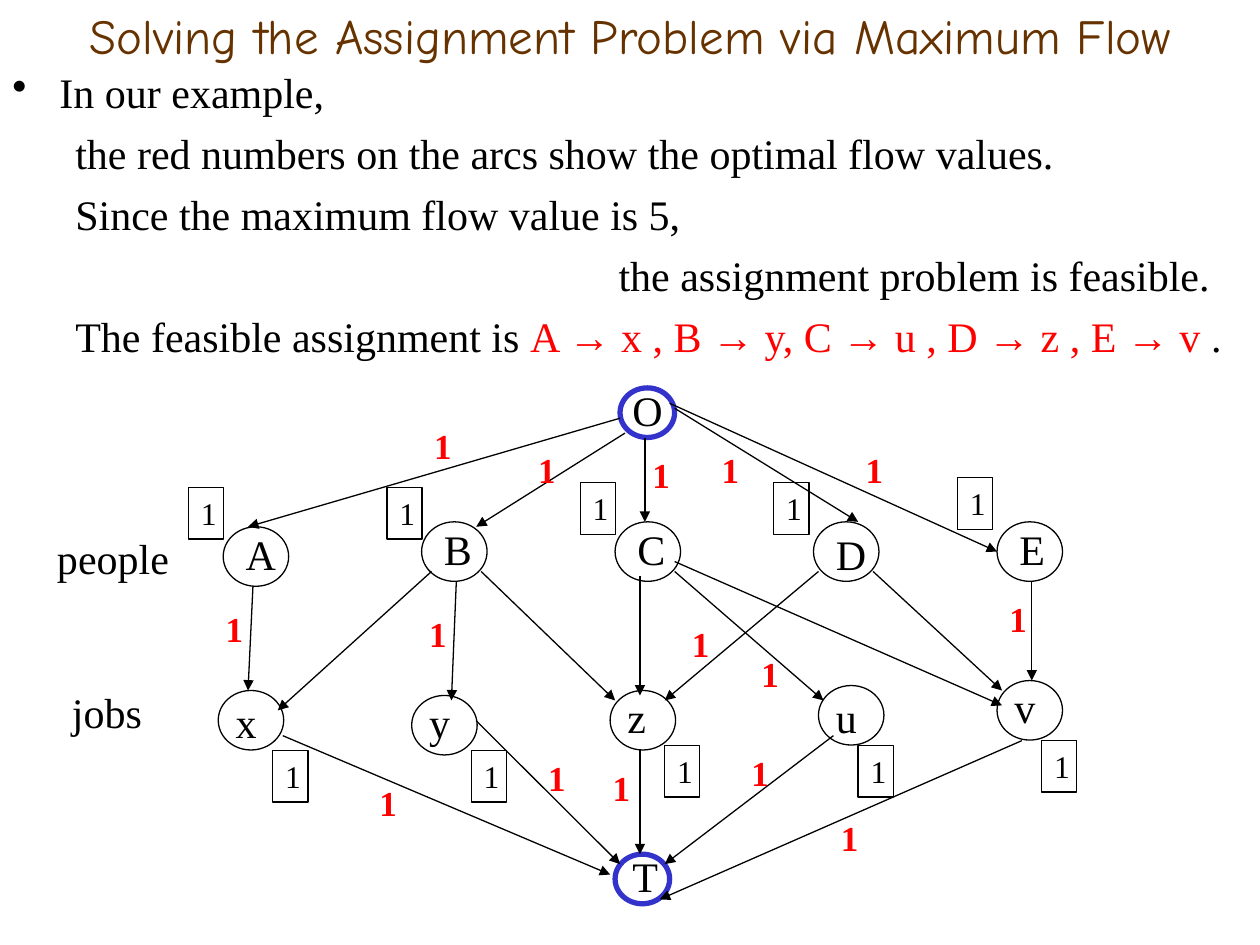
from lxml.etree import SubElement
from pptx import Presentation
from pptx.dml.color import RGBColor
from pptx.enum.shapes import MSO_CONNECTOR, MSO_SHAPE
from pptx.enum.text import MSO_ANCHOR, MSO_AUTO_SIZE, PP_ALIGN
from pptx.oxml.ns import qn
from pptx.util import Cm, Pt

BODY_FONT = "Times New Roman"
BLACK, WHITE, RED, BLUE, BROWN = "000000", "FFFFFF", "FF0000", "3333CC", "663300"

# Each node: circle left and top, then letter left and top.
PEOPLE = {
    "A": (4.5, 10.62, 4.7, 10.52),
    "B": (8.5, 10.52, 8.7, 10.42),
    "C": (12.4, 10.52, 12.6, 10.42),
    "D": (16.4, 10.52, 16.6, 10.52),
    "E": (20.1, 10.52, 20.3, 10.42),
}
JOBS = {
    "x": (4.4, 13.92, 4.5, 13.92),
    "y": (8.3, 14.02, 8.4, 13.92),
    "z": (12.3, 13.92, 12.4, 13.82),
    "u": (16.5, 13.82, 16.6, 13.82),
    "v": (20.1, 13.72, 20.2, 13.62),
}
TERMINALS = {"O": (12.5, 7.82, 12.5, 7.62), "T": (12.4, 17.22, 12.5, 17.02)}
ROW_LABELS = {"people": (0.9, 10.62, 3.4), "jobs": (1.2, 13.72, 2.2)}

PERSON_CAPACITIES = [
    (3.8, 9.83), (7.8, 9.83), (11.7, 9.73), (15.6, 9.73), (19.3, 9.63),
]
JOB_CAPACITY_SHIFT = (1.7, 5.3)

ARCS = [
    (5.1, 11.82, 5, 13.92),
    (8.7, 11.52, 5.6, 14.32),
    (9.2, 11.72, 9.1, 14.12),
    (9.7, 11.52, 12.4, 14.12),
    (12.9, 11.62, 12.9, 14.02),
    (13.6, 11.52, 16.6, 14.12),
    (16.5, 11.52, 13.4, 14.12),
    (20.8, 11.72, 20.8, 13.72),
    (17.6, 11.52, 20.2, 13.92),
    (13.6, 11.32, 20.2, 14.22),
    (12.5, 8.43, 5, 10.62),
    (12.6, 8.73, 9.6, 10.62),
    (13, 8.82, 13, 10.52),
    (13.6, 8.23, 17.3, 10.52),
    (13.5, 8.13, 20.1, 11.12),
    (5.7, 14.83, 12.3, 17.63),
    (9.6, 14.53, 12.5, 17.42),
    (12.9, 15.12, 12.9, 17.22),
    (16.8, 14.83, 13.4, 17.42),
    (20.6, 14.93, 13.3, 18.13),
]
FLOWS = [
    (7.4, 15.62), (10.8, 15.12), (12.1, 15.32), (14.9, 15.02), (16.7, 16.34),
    (4.3, 12.12), (8.4, 12.22), (15.1, 13.03), (13.7, 12.42), (20.1, 11.92),
    (17.2, 8.92), (14.3, 8.92), (12.9, 9.02), (10.6, 8.92), (8.5, 8.43),
]

# Each line: left margin, first-line indent, bullet, coloured pieces.
EXPLANATION = [
    (0.95, -0.95, "•", [("In our example,", BLACK)]),
    (2.06, -0.79, None,
     [("the red numbers on the arcs show the optimal flow values.", BLACK)]),
    (2.06, -0.79, None, [("Since the maximum flow value is 5,", BLACK)]),
    (12.22, 0, None, [("the assignment problem is feasible.", BLACK)]),
    (2.06, -0.79, None,
     [("The feasible assignment is ", BLACK),
      ("A → x , B → y, C → u , D → z , E → v", RED), (" .", BLACK)]),
]


def rgb(value):
    """Return the colour for a hex string."""
    return RGBColor.from_string(value)


def format_run(run, size, color=BLACK, bold=False, face=BODY_FONT):
    """Set the font of one run."""
    run.font.name = face
    run.font.size = Pt(size)
    run.font.bold = bold
    run.font.color.rgb = rgb(color)


def write(frame, text, size, color=BLACK, bold=False):
    """Put a short left-aligned label at the top of a text frame."""
    frame.word_wrap = True
    frame.vertical_anchor = MSO_ANCHOR.TOP
    paragraph = frame.paragraphs[0]
    paragraph.text = text
    paragraph.alignment = PP_ALIGN.LEFT
    format_run(paragraph.runs[0], size, color, bold)


def add_label(slide, text, left, top, width=1, height=1.27, size=24,
              color=BLACK, bold=False):
    """Add a free-standing label."""
    label = slide.shapes.add_textbox(Cm(left), Cm(top), Cm(width), Cm(height))
    write(label.text_frame, text, size, color, bold)


def add_outline(slide, kind, left, top, width, height, line=BLACK, weight=0.75):
    """Add an unfilled outlined shape and return it."""
    outline = slide.shapes.add_shape(
        kind, Cm(left), Cm(top), Cm(width), Cm(height))
    outline.shadow.inherit = False
    outline.fill.background()
    outline.line.color.rgb = rgb(line)
    outline.line.width = Pt(weight)
    return outline


def add_nodes(slide, nodes, width, height, line=BLACK, weight=0.75):
    """Add white circles, each with its letter."""
    for letter, (left, top, letter_left, letter_top) in nodes.items():
        circle = add_outline(slide, MSO_SHAPE.OVAL, left, top, width, height,
                             line, weight)
        circle.fill.solid()
        circle.fill.fore_color.rgb = rgb(WHITE)
        add_label(slide, letter, letter_left, letter_top)


def add_capacity(slide, left, top):
    """Add a boxed unit capacity."""
    capacity = add_outline(slide, MSO_SHAPE.RECTANGLE, left, top, 0.71, 1.04)
    write(capacity.text_frame, "1", 18)


def add_arc(slide, *ends):
    """Add an arrow from its start to its end point."""
    arc = slide.shapes.add_connector(MSO_CONNECTOR.STRAIGHT, *map(Cm, ends))
    arc.line.color.rgb = rgb(BLACK)
    arc.line.width = Pt(0.75)
    SubElement(arc.line._get_or_add_ln(), qn("a:tailEnd"), type="triangle")
    SubElement(arc._element.spPr, qn("a:effectLst"))


def set_title(slide, text):
    """Move, fill and format the title placeholder."""
    title = slide.shapes.title
    title.left, title.top, title.width, title.height = map(Cm, (0, 0, 25.4, 1.42))
    frame = title.text_frame
    frame.text = text
    frame.auto_size = MSO_AUTO_SIZE.NONE
    frame.vertical_anchor = MSO_ANCHOR.MIDDLE
    frame.paragraphs[0].alignment = PP_ALIGN.CENTER
    format_run(frame.paragraphs[0].runs[0], 28, BROWN, face="Comic Neue")


def add_explanation(slide):
    """Add the bulleted explanation above the network."""
    frame = slide.shapes.add_textbox(
        Cm(0), Cm(1.22), Cm(25.4), Cm(8)).text_frame
    frame.word_wrap = True
    for index, (margin, indent, bullet, pieces) in enumerate(EXPLANATION):
        paragraph = frame.add_paragraph() if index else frame.paragraphs[0]
        paragraph.space_before = Pt(6 if index else 0)
        properties = paragraph._p.get_or_add_pPr()
        properties.set("marL", str(Cm(margin)))
        properties.set("indent", str(Cm(indent)))
        if bullet:
            SubElement(properties, qn("a:buChar"), char=bullet)
        for text, color in pieces:
            run = paragraph.add_run()
            run.text = text
            format_run(run, 24, color)


def main():
    """Build the slide and save it."""
    presentation = Presentation()
    presentation.slide_width, presentation.slide_height = Cm(25.4), Cm(19.05)
    slide = presentation.slides.add_slide(presentation.slide_layouts[5])
    set_title(slide, "Solving the Assignment Problem via Maximum Flow")
    add_explanation(slide)
    add_nodes(slide, PEOPLE | JOBS, 1.32, 1.2)
    add_nodes(slide, TERMINALS, 1.1, 1, BLUE, 3)
    for text, (left, top, width) in ROW_LABELS.items():
        add_label(slide, text, left, top, width)
    for arc in ARCS:
        add_arc(slide, *arc)
    for shift_x, shift_y in ((0, 0), JOB_CAPACITY_SHIFT):
        for left, top in PERSON_CAPACITIES:
            add_capacity(slide, left + shift_x, top + shift_y)
    for left, top in FLOWS:
        add_label(slide, "1", left, top, 0.81, 1.09, 20, RED, True)
    presentation.save("out.pptx")


if __name__ == "__main__":
    main()
